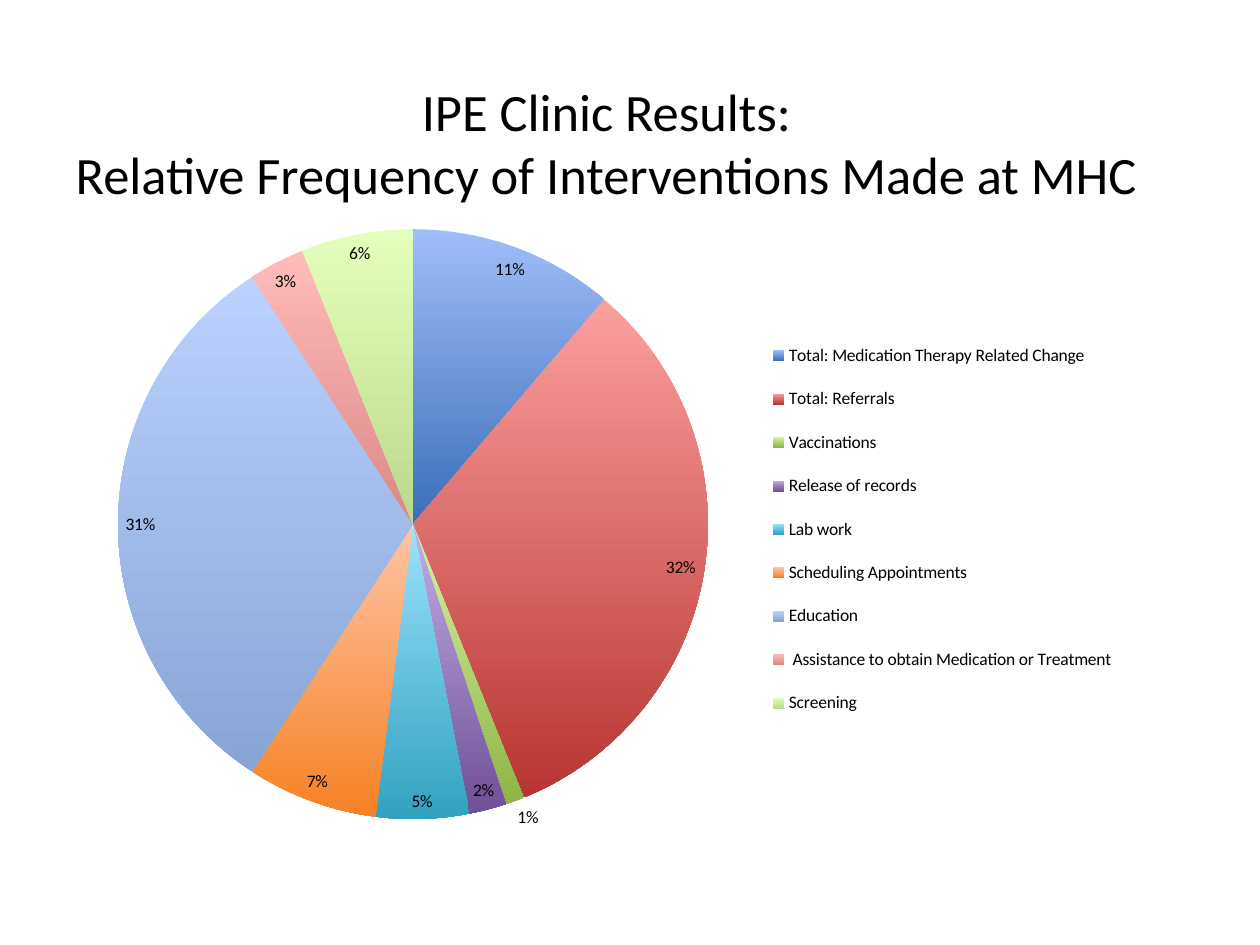
import pptx
import pptx.chart.data
import pptx.dml.color
import pptx.enum.chart
import pptx.enum.text
import pptx.oxml
import pptx.oxml.ns
import pptx.util

RGB = pptx.dml.color.RGBColor
BLACK = RGB(0x00, 0x00, 0x00)
BLUE = RGB(0xA0, 0xBD, 0xF9), RGB(0x3A, 0x6F, 0xB8)
RED = RGB(0xFB, 0x9F, 0x9E), RGB(0xB8, 0x35, 0x32)
GREEN = RGB(0xD5, 0xF5, 0x9F), RGB(0x8F, 0xB4, 0x45)
PURPLE = RGB(0xC3, 0xAE, 0xE3), RGB(0x70, 0x50, 0x98)
AQUA = RGB(0x9B, 0xE2, 0xFC), RGB(0x31, 0xA2, 0xC0)
ORANGE = RGB(0xFF, 0xC3, 0xA5), RGB(0xF6, 0x82, 0x24)
PALE_BLUE = RGB(0xBB, 0xD1, 0xFF), RGB(0x88, 0xA4, 0xD5)
PALE_RED = RGB(0xFF, 0xBB, 0xBA), RGB(0xDB, 0x88, 0x87)
PALE_GREEN = RGB(0xE4, 0xFF, 0xBB), RGB(0xBC, 0xD8, 0x8C)

INTERVENTIONS = [
    ("Total: Medication Therapy Related Change", 11, BLUE),
    ("Total: Referrals", 32, RED),
    ("Vaccinations", 1, GREEN),
    ("Release of records", 2, PURPLE),
    ("Lab work", 5, AQUA),
    ("Scheduling Appointments", 7, ORANGE),
    ("Education", 31, PALE_BLUE),
    (" Assistance to obtain Medication or Treatment", 3, PALE_RED),
    ("Screening", 6, PALE_GREEN),
]


class Deck:
    font = "Calibri"
    title_size = 30
    chart_size = 10
    columns = 10
    rows = 7.5

    def __init__(self, width, height):
        self.prs = pptx.Presentation()
        self.prs.slide_width = pptx.util.Inches(width)
        self.prs.slide_height = pptx.util.Inches(height)
        self.s = self.prs.slides.add_slide(self.prs.slide_layouts[6])

    def box(self, col, row, w, h):
        cw = self.prs.slide_width / self.columns
        rh = self.prs.slide_height / self.rows
        return int(col * cw), int(row * rh), int(w * cw), int(h * rh)

    def style(self, font, size):
        font.name = self.font
        font.size = pptx.util.Pt(size)
        font.color.rgb = BLACK

    def title(self, lines, area):
        tf = self.s.shapes.add_textbox(*self.box(*area)).text_frame
        tf.word_wrap = True
        tf.vertical_anchor = pptx.enum.text.MSO_ANCHOR.TOP
        p = tf.paragraphs[0]
        p.alignment = pptx.enum.text.PP_ALIGN.CENTER
        for i, line in enumerate(lines):
            if i:
                p.add_line_break()
            r = p.add_run()
            r.text = line
            self.style(r.font, self.title_size)

    def layout(self, percents, inner=False):
        target = '<c:layoutTarget val="inner"/>' if inner else ""
        modes = '<c:xMode val="edge"/><c:yMode val="edge"/>'
        sizes = "".join(f'<c:{k} val="{v / 100:.4f}"/>' for k, v in zip("xywh", percents))
        ns = pptx.oxml.ns.nsdecls("c")
        return pptx.oxml.parse_xml(
            f"<c:layout {ns}><c:manualLayout>{target}{modes}{sizes}</c:manualLayout></c:layout>")

    def pie(self, name, slices, area, plot_area, legend_area):
        names, values, gradients = zip(*slices)
        data = pptx.chart.data.CategoryChartData()
        data.categories = names
        data.add_series(name, values)
        kinds = pptx.enum.chart
        chart = self.s.shapes.add_chart(
            kinds.XL_CHART_TYPE.PIE, *self.box(*area), data).chart
        self.style(chart.font, self.chart_size)
        chart.has_title = False
        chart.has_legend = True
        chart.legend.position = kinds.XL_LEGEND_POSITION.RIGHT
        chart.legend.include_in_layout = False
        plot = chart.plots[0]
        plot.vary_by_categories = True
        for i, (top, bottom) in enumerate(gradients):
            fmt = plot.series[0].points[i].format
            fmt.fill.gradient()
            fmt.fill.gradient_angle = 270
            for stop, color, pos in zip(fmt.fill.gradient_stops, (top, bottom), (0, 1)):
                stop.color.rgb = color
                stop.position = pos
            fmt.line.fill.background()
        plot.has_data_labels = True
        labels = plot.data_labels
        labels.show_value = True
        labels.show_percentage = False
        labels.number_format = '0"%"'
        labels.number_format_is_linked = False
        labels.position = kinds.XL_LABEL_POSITION.BEST_FIT
        self.style(labels.font, self.chart_size)
        root = chart.element
        for tag, index, layout in (("plotArea", 0, self.layout(plot_area, inner=True)),
                                   ("legend", 1, self.layout(legend_area))):
            parent = root.find(".//" + pptx.oxml.ns.qn("c:" + tag))
            for old in parent.findall(pptx.oxml.ns.qn("c:layout")):
                parent.remove(old)
            parent.insert(index, layout)


def main():
    deck = Deck(10, 7.5)
    deck.title(
        ["IPE Clinic Results:", "Relative Frequency of Interventions Made at MHC"],
        (0.23, 0.58, 9.17, 1.45))
    deck.pie("Series 1", INTERVENTIONS, (0.51, 1.63, 8.9, 5.39),
             (4.8, 3.2, 52.6, 87.5), (59.8, 17.2, 37, 61))
    deck.prs.save("out.pptx")


if __name__ == "__main__":
    main()
